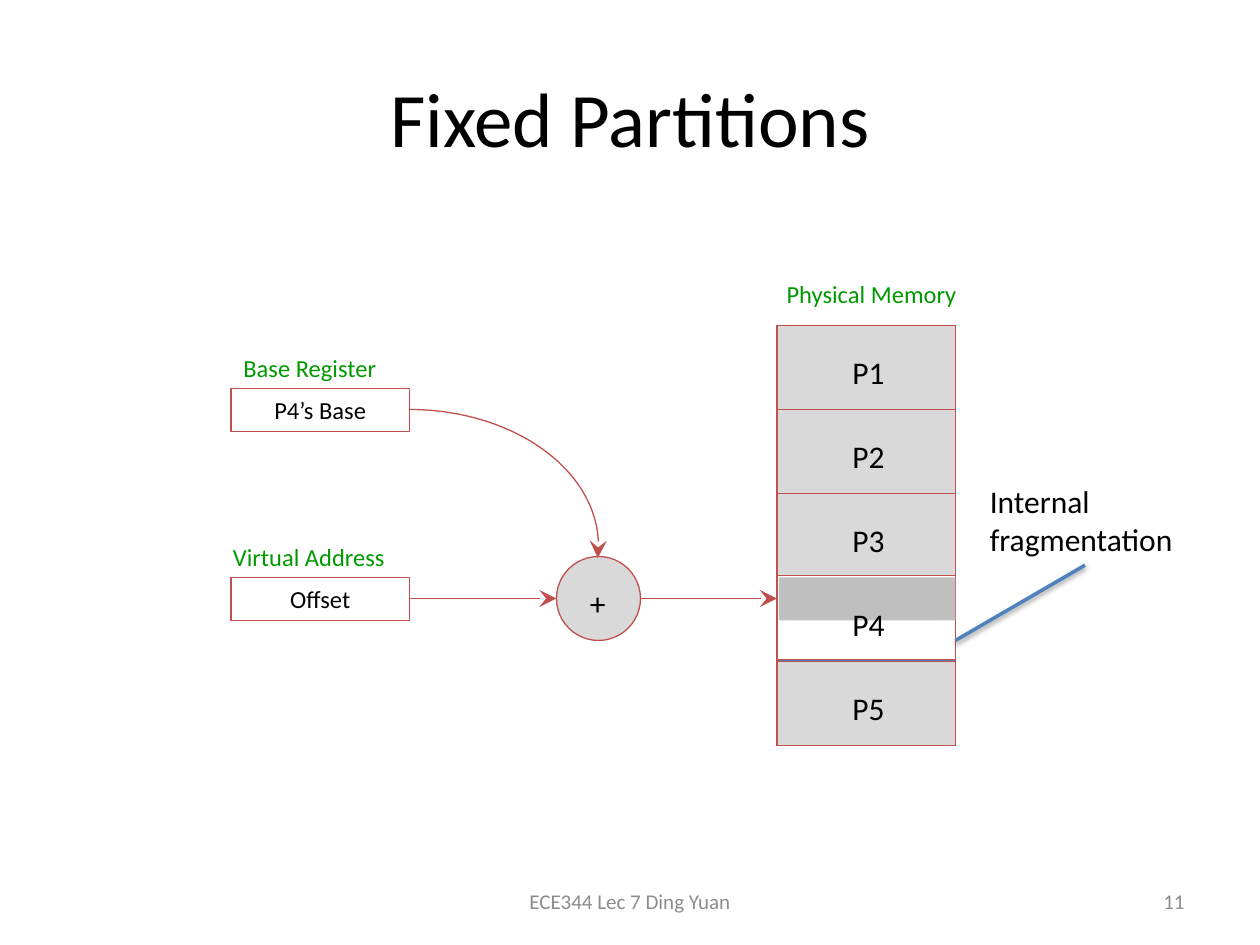
import math

import pptx
import pptx.dml.color
import pptx.enum.shapes
import pptx.enum.text
import pptx.oxml
import pptx.oxml.ns
import pptx.util

Pt = pptx.util.Pt
ALIGN = pptx.enum.text.PP_ALIGN
ANCHOR = pptx.enum.text.MSO_ANCHOR
SHAPE = pptx.enum.shapes.MSO_SHAPE
COLORS = {
    "black": "000000",
    "white": "FFFFFF",
    "footer": "8C8C8C",
    "label": "009900",
    "red": "C0504D",
    "blue": "4F81BD",
    "cell": "D9D9D9",
    "used": "BFBFBF",
}
DRAWING = pptx.oxml.ns.nsdecls("a")
NO_EFFECT = f"<a:effectLst {DRAWING}/>"
SOFT_SHADOW = (
    f'<a:effectLst {DRAWING}><a:outerShdw blurRad="{Pt(3.1)}" dist="{Pt(1.6)}" '
    'dir="5400000" rotWithShape="0"><a:srgbClr val="000000"><a:alpha val="38000"/>'
    "</a:srgbClr></a:outerShdw></a:effectLst>"
)


def color(name):
    """Return the named colour."""
    return pptx.dml.color.RGBColor.from_string(COLORS[name])


def write(shape, text, size, font_color="black", align=ALIGN.LEFT, anchor=ANCHOR.TOP, wrap=True):
    """Put formatted text into a shape."""
    frame = shape.text_frame
    frame.text = text
    frame.word_wrap = wrap
    frame.vertical_anchor = anchor
    for paragraph in frame.paragraphs:
        paragraph.alignment = align
        for run in paragraph.runs:
            run.font.name = "Calibri"
            run.font.size = Pt(size)
            run.font.color.rgb = color(font_color)


def add_text(slide, box, text, size, **style):
    """Add a text box."""
    write(slide.shapes.add_textbox(*map(Pt, box)), text, size, **style)


def add_block(slide, box, fill, line=None, kind=SHAPE.RECTANGLE):
    """Add a flat filled shape, outlined when a line colour is given."""
    shape = slide.shapes.add_shape(kind, *map(Pt, box))
    shape.shadow.inherit = False
    shape.fill.solid()
    shape.fill.fore_color.rgb = color(fill)
    if line:
        shape.line.color.rgb = color(line)
        shape.line.width = Pt(0.75)
    else:
        shape.line.fill.background()
    return shape


def add_line(slide, start, end, line, width):
    """Add a straight connector."""
    connector = slide.shapes.add_connector(
        pptx.enum.shapes.MSO_CONNECTOR.STRAIGHT, *map(Pt, start + end))
    connector.line.color.rgb = color(line)
    connector.line.width = Pt(width)
    return connector


def add_arrowhead(shape):
    """Put a stealth arrowhead at the end of a line."""
    shape.line._get_or_add_ln().append(
        pptx.oxml.parse_xml(f'<a:tailEnd {DRAWING} type="stealth" w="lg" len="lg"/>'))


def add_arrow(slide, start, end):
    """Add a straight red arrow."""
    connector = add_line(slide, start, end, "red", 0.75)
    add_arrowhead(connector)
    connector._element.spPr.append(pptx.oxml.parse_xml(NO_EFFECT))


def add_curved_arrow(slide, center, radii, end_angle, steps=48):
    """Add an arrow along an ellipse from its top clockwise to the end angle."""
    angles = [math.radians(-90 + (90 + end_angle) * step / steps) for step in range(steps + 1)]
    points = [
        (Pt(center[0] + radii[0] * math.cos(angle)), Pt(center[1] + radii[1] * math.sin(angle)))
        for angle in angles
    ]
    builder = slide.shapes.build_freeform(*points[0])
    builder.add_line_segments(points[1:], close=False)
    curve = builder.convert_to_shape()
    curve.shadow.inherit = False
    curve.fill.background()
    curve.line.color.rgb = color("red")
    curve.line.width = Pt(0.75)
    add_arrowhead(curve)


def add_register(slide, top, text, label, label_left):
    """Add a register box with its label above."""
    add_text(slide, (label_left, top - 24, 132, 24), label, 14, font_color="label")
    box = add_block(slide, (132, top, 102, 24.5), "white", "red")
    write(box, text, 14, align=ALIGN.CENTER)


def add_memory(slide):
    """Add the physical memory column with its five partitions."""
    add_text(slide, (432, 156, 132, 24), "Physical Memory", 14,
             font_color="label", align=ALIGN.CENTER)
    add_block(slide, (444, 186, 102, 240), "blue", "red")
    for index, top in enumerate((186, 234, 282, 329, 378)):
        add_block(slide, (444, top, 102, 48), "white" if index == 3 else "cell", "red")
    add_block(slide, (445, 330, 101, 24.5), "used")
    for index in range(5):
        add_text(slide, (480, 198 + 48 * index, 36, 26.6), f"P{index + 1}", 18)


def add_address_path(slide):
    """Add the adder and the arrows through it."""
    add_block(slide, (318, 318, 48, 48), "cell", "red", SHAPE.OVAL)
    add_text(slide, (330, 330, 30, 26.6), "+", 18)
    add_arrow(slide, (234, 342), (318, 342))
    add_arrow(slide, (366, 342), (444, 342))
    add_curved_arrow(slide, (234, 312), (108, 78), 5)


def main():
    """Build and save the slide."""
    presentation = pptx.Presentation()
    presentation.slide_width, presentation.slide_height = Pt(720), Pt(540)
    slide = presentation.slides.add_slide(presentation.slide_layouts[5])
    title = slide.shapes.title
    title.left, title.top, title.width, title.height = map(Pt, (36, 21.6, 648, 90))
    write(title, "Fixed Partitions", 44, align=ALIGN.CENTER, anchor=ANCHOR.MIDDLE)
    add_text(slide, (246, 500.5, 228, 28.75), "ECE344 Lec 7 Ding Yuan", 12,
             font_color="footer", align=ALIGN.CENTER, anchor=ANCHOR.MIDDLE)
    add_text(slide, (516, 500.5, 168, 28.75), "11", 12,
             font_color="footer", align=ALIGN.RIGHT, anchor=ANCHOR.MIDDLE)
    add_register(slide, 222, "P4’s Base", "Base Register", 132)
    add_register(slide, 330, "Offset", "Virtual Address", 126)
    add_memory(slide)
    add_address_path(slide)
    add_text(slide, (558.5, 272, 123, 51), "Internal\nfragmentation", 18, wrap=False)
    pointer = add_line(slide, (620, 323), (546, 366), "blue", 2)
    pointer._element.spPr.append(pptx.oxml.parse_xml(SOFT_SHADOW))
    presentation.save("out.pptx")


if __name__ == "__main__":
    main()
